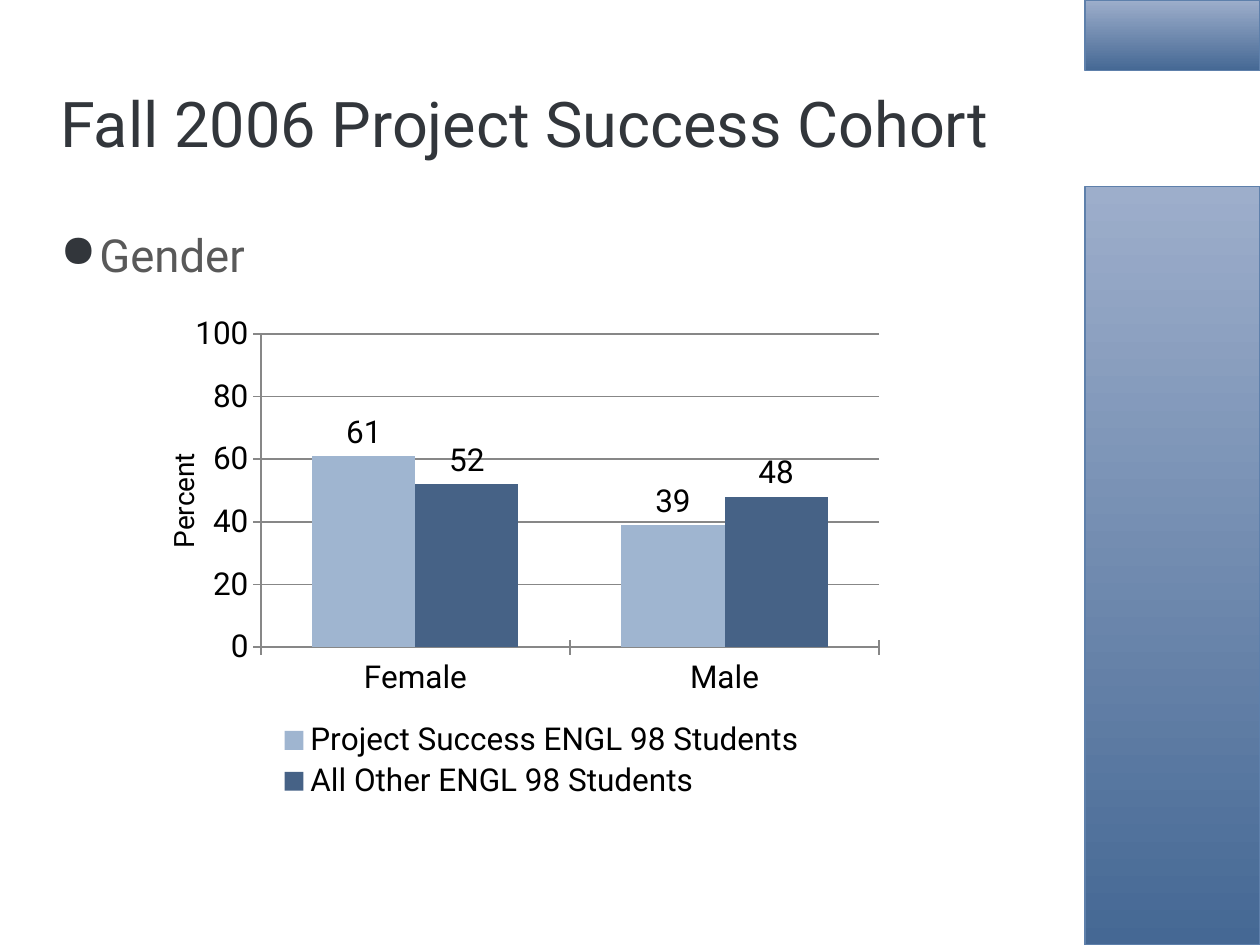
from lxml import etree
from pptx import Presentation
from pptx import util as u
from pptx.chart import data as cd
from pptx.dml import color as dc
from pptx.enum import chart as ce
from pptx.enum import shapes, text
from pptx.oxml import ns

theme = {
    "font": "Roboto",
    "ink": "32363B", "grey": "595959", "black": "000000", "axis": "878787",
    "deep": "456894", "pale": "9DAECB", "edge": "5E80AB",
    "bars": ["9FB5D0", "466286"],
    "title": 36, "body": 26, "chart": 18, "label": 16,
}

deck = Presentation()
deck.slide_width, deck.slide_height = u.Inches(10), u.Inches(7.5)
wide, high = deck.slide_width / 100, deck.slide_height / 100
slide = deck.slides.add_slide(deck.slide_layouts[6])


def place(x, y, w, h):
    return [int(n) for n in (x * wide, y * high, w * wide, h * high)]


def style(font, size, tint):
    look = {"name": theme["font"], "size": u.Pt(theme[size]), "bold": False}
    for key, val in look.items():
        setattr(font, key, val)
    font.color.rgb = dc.RGBColor.from_string(theme[tint])


for top, tall in [(19.73, 80.27), (0, 7.47)]:
    band = slide.shapes.add_shape(
        shapes.MSO_SHAPE.RECTANGLE, *place(86.1, top, 13.9, tall))
    band.shadow.inherit = False
    band.fill.gradient()
    band.fill.gradient_angle = 90
    for stop, tint, pos in zip(band.fill.gradient_stops, ("deep", "pale"), (0, 1)):
        stop.color.rgb = dc.RGBColor.from_string(theme[tint])
        stop.position = pos
    band.line.color.rgb = dc.RGBColor.from_string(theme["edge"])
    band.line.width = u.Pt(1)

data = cd.CategoryChartData(number_format="#,##0")
data.categories = ["Female", "Male"]
data.add_series("Project Success ENGL 98 Students", [61, 39])
data.add_series("All Other ENGL 98 Students", [52, 48])
chart = slide.shapes.add_chart(
    ce.XL_CHART_TYPE.COLUMN_CLUSTERED, *place(14.5, 32.13, 56.4, 53.47), data).chart
chart.has_title = False
style(chart.font, "chart", "black")

chart.has_legend = True
chart.legend.position = ce.XL_LEGEND_POSITION.BOTTOM
chart.legend.include_in_layout = False

plot = chart.plots[0]
for key, val in {"gap_width": 100, "overlap": 0, "vary_by_categories": False}.items():
    setattr(plot, key, val)
for bar, tint in zip(plot.series, theme["bars"]):
    bar.format.fill.solid()
    bar.format.fill.fore_color.rgb = dc.RGBColor.from_string(tint)
    tags = {"show_value": True, "number_format": "#,##0",
            "number_format_is_linked": False,
            "position": ce.XL_LABEL_POSITION.OUTSIDE_END}
    for key, val in tags.items():
        setattr(bar.data_labels, key, val)

scale = chart.value_axis
marks = {"minimum_scale": 0, "maximum_scale": 100, "major_unit": 20,
         "has_major_gridlines": True}
for key, val in marks.items():
    setattr(scale, key, val)
scale.tick_labels.number_format = "#,##0"
scale.tick_labels.number_format_is_linked = False
for axis in (scale, chart.category_axis):
    axis.major_tick_mark = ce.XL_TICK_MARK.CROSS
for part in (scale, chart.category_axis, scale.major_gridlines):
    part.format.line.color.rgb = dc.RGBColor.from_string(theme["axis"])
    part.format.line.width = u.Pt(1)

root = plot._element.getparent()
frames = [(root, 0, "inner", (0.11, 0.06, 0.87, 0.62)),
          (chart.legend._element, 1, None, (0.13, 0.82, 0.75, 0.17))]
for node, spot, kind, area in frames:
    for old in node.findall(ns.qn("c:layout")):
        node.remove(old)
    frame = etree.Element(ns.qn("c:layout"))
    node.insert(spot, frame)
    hand = etree.SubElement(frame, ns.qn("c:manualLayout"))
    rules = [("layoutTarget", kind)] if kind else []
    rules += [("xMode", "edge"), ("yMode", "edge")] + list(zip("xywh", area))
    for tag, val in rules:
        etree.SubElement(hand, ns.qn("c:" + tag), val=str(val))

mid, top = text.MSO_ANCHOR.MIDDLE, text.MSO_ANCHOR.TOP
notes = [
    ("Fall 2006 Project Success Cohort", (3.8, 7.6, 77.5, 10.67), "title", "ink", mid, 0),
    ("Gender", (3.8, 23.33, 77.5, 66), "body", "grey", top, 0),
    ("Percent", (8.8, 49.2, 11.5, 4.93), "label", "black", top, 270),
]
for words, area, size, tint, hold, turn in notes:
    box = slide.shapes.add_textbox(*place(*area))
    box.rotation = turn
    box.text_frame.word_wrap = True
    box.text_frame.vertical_anchor = hold
    para = box.text_frame.paragraphs[0]
    if size == "body":
        props = para._p.get_or_add_pPr()
        dent = int(u.Inches(0.31))
        props.set("marL", str(dent))
        props.set("indent", str(-dent))
        hue = etree.SubElement(props, ns.qn("a:buClr"))
        etree.SubElement(hue, ns.qn("a:srgbClr"), val=theme["ink"])
        etree.SubElement(props, ns.qn("a:buChar"), char="●")
    run = para.add_run()
    run.text = words
    style(run.font, size, tint)

deck.save("out.pptx")
